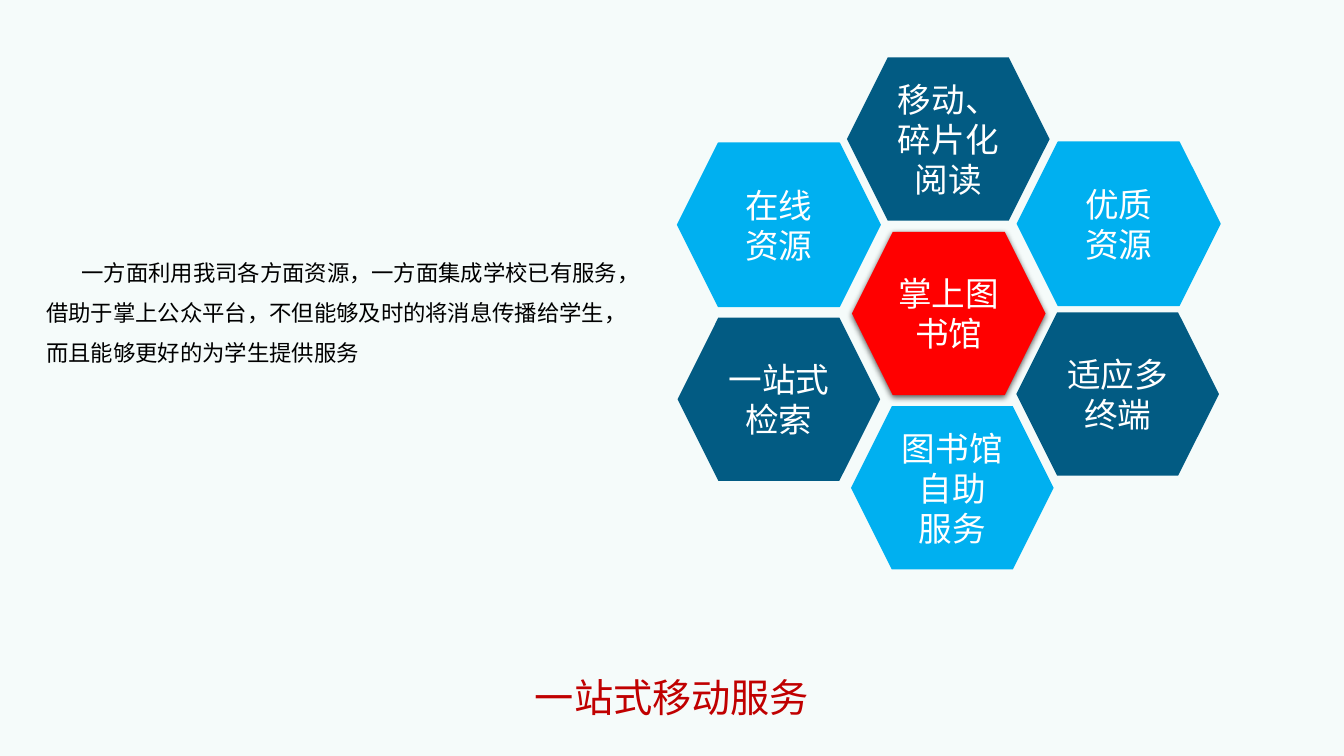
from dataclasses import dataclass
from typing import Optional

from lxml.etree import SubElement
from pptx import Presentation
from pptx.dml.color import RGBColor
from pptx.enum.shapes import MSO_SHAPE
from pptx.enum.text import MSO_ANCHOR, MSO_AUTO_SIZE, PP_ALIGN
from pptx.oxml.ns import qn
from pptx.util import Inches, Pt

FONT = "Noto Sans CJK SC"
BACKGROUND = RGBColor(0xF5, 0xFB, 0xFA)
SKY = RGBColor(0x00, 0xB0, 0xF0)
NAVY = RGBColor(0x02, 0x5B, 0x83)
RED = RGBColor(0xFF, 0x00, 0x00)
DARK_RED = RGBColor(0xC0, 0x00, 0x00)
WHITE = RGBColor(0xFF, 0xFF, 0xFF)
BLACK = RGBColor(0x00, 0x00, 0x00)


@dataclass
class Hexagon:
    text: str
    left: float
    top: float
    fill: RGBColor
    outline: Optional[RGBColor] = None
    width: float = 2.01
    height: float = 1.62
    shadow: bool = False


HEXAGONS = [
    Hexagon("在线\n资源", 6.72, 1.42, SKY, SKY),
    Hexagon("移动、碎片化\n阅读", 8.4, 0.57, NAVY),
    Hexagon("掌上图书馆", 8.45, 2.3, RED, width=1.92, shadow=True),
    Hexagon("优质\n资源", 10.09, 1.41, SKY, SKY),
    Hexagon("一站式检索", 6.72, 3.15, NAVY),
    Hexagon("图书馆自助\n服务", 8.44, 4.03, SKY),
    Hexagon("适应多终端", 10.08, 3.1, NAVY),
]


def write_text(tf, text: str, size: float, color: RGBColor, anchor, paragraph: dict) -> None:
    tf.text = text
    frame = {"word_wrap": True, "auto_size": MSO_AUTO_SIZE.NONE, "vertical_anchor": anchor}
    for name, value in frame.items():
        setattr(tf, name, value)
    for p in tf.paragraphs:
        for name, value in paragraph.items():
            setattr(p, name, value)
        for r in p.runs:
            for name, value in {"name": FONT, "size": Pt(size), "bold": False}.items():
                setattr(r.font, name, value)
            r.font.color.rgb = color
            SubElement(r.font._element, qn("a:ea"), typeface=FONT)


def add_shadow(s) -> None:
    effects = s._element.spPr.find(qn("a:effectLst"))
    outer = SubElement(effects, qn("a:outerShdw"), blurRad=str(Pt(4.5)),
                       dist=str(Pt(1.5)), dir="5400000", rotWithShape="0")
    color = SubElement(outer, qn("a:srgbClr"), val=str(BLACK))
    SubElement(color, qn("a:alpha"), val="63000")


def draw_hexagon(slide, item: Hexagon) -> None:
    s = slide.shapes.add_shape(MSO_SHAPE.HEXAGON, Inches(item.left), Inches(item.top),
                               Inches(item.width), Inches(item.height))
    s.shadow.inherit = False
    if item.shadow:
        add_shadow(s)
    s.fill.solid()
    s.fill.fore_color.rgb = item.fill
    if item.outline is None:
        s.line.fill.background()
    else:
        s.line.color.rgb = item.outline
        s.line.width = Pt(1)
    write_text(s.text_frame, item.text, 24, WHITE, MSO_ANCHOR.MIDDLE,
               {"alignment": PP_ALIGN.CENTER, "line_spacing": Pt(28.6)})


def draw_title(slide) -> None:
    s = slide.shapes.title
    place = {"left": 3.26, "top": 6.63, "width": 6.81, "height": 0.57}
    for name, value in place.items():
        setattr(s, name, Inches(value))
    write_text(s.text_frame, "一站式移动服务", 28, DARK_RED, MSO_ANCHOR.MIDDLE,
               {"alignment": PP_ALIGN.CENTER})


def draw_description(slide) -> None:
    s = slide.shapes.add_textbox(Inches(0.36), Inches(2.39), Inches(5.89), Inches(1.31))
    text = ("一方面利用我司各方面资源，一方面集成学校已有服务，"
            "借助于掌上公众平台，不但能够及时的将消息传播给学生，"
            "而且能够更好的为学生提供服务")
    write_text(s.text_frame, text, 16, BLACK, MSO_ANCHOR.TOP,
               {"alignment": PP_ALIGN.LEFT, "line_spacing": Pt(28.6)})
    pPr = s.text_frame.paragraphs[0]._p.get_or_add_pPr()
    pPr.set("indent", str(Inches(0.35)))


def main() -> None:
    prs = Presentation()
    prs.slide_width = Inches(13.33)
    prs.slide_height = Inches(7.5)
    slide = prs.slides.add_slide(prs.slide_layouts[5])
    slide.background.fill.solid()
    slide.background.fill.fore_color.rgb = BACKGROUND
    for item in HEXAGONS:
        draw_hexagon(slide, item)
    draw_description(slide)
    draw_title(slide)
    prs.save("out.pptx")


if __name__ == "__main__":
    main()
